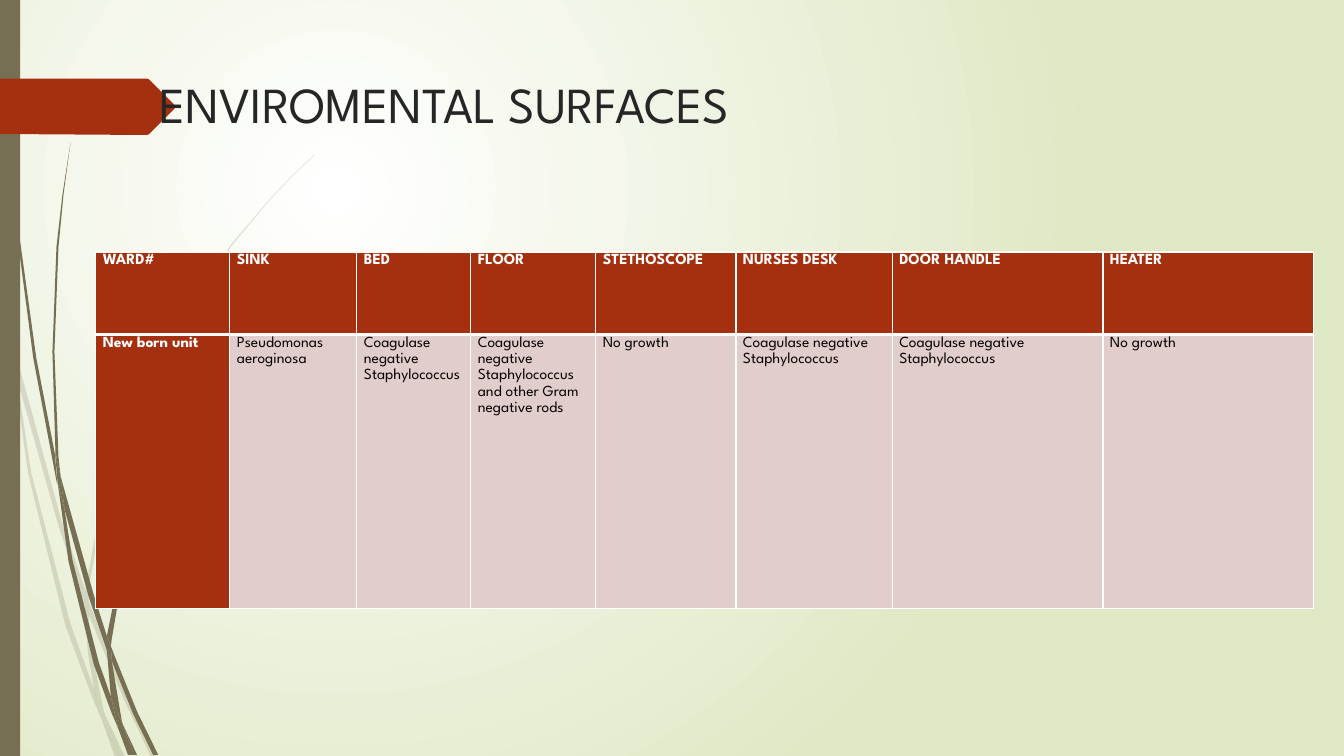
from lxml import etree
from pptx import Presentation
from pptx import util as u
from pptx.dml import color as col
from pptx.enum import shapes as sh, text as tx
from pptx.oxml import ns

HUES = {"bark": "766F54", "rust": "A53010", "rose": "E1CDCC", "ink": "262626",
        "black": "000000", "white": "FFFFFF", "lime": "DFE8C4"}
FACE = "League Spartan"

# Outlines of the grass leaves and the tag: corner points in inches
PALE = [
    [(.11, 3.5), (.09, 3.22), (0, 2.82), (0, 2.99), (.1, 3.44)],
    [(.58, 5.22), (.84, 5.99), (.85, 5.86), (.62, 5.2), (.14, 3.45),
     (.17, 3.76)],
    [(.92, 6.07), (.88, 5.96), (.88, 6.1), (1.23, 6.94), (1.5, 7.51),
     (1.55, 7.51), (1.27, 6.92)],
    [(1.19, 7.51), (1.24, 7.51), (1.05, 7.11)],
    [(.93, 6.83), (.7, 6.19), (.31, 4.69), (.17, 3.76), (.11, 3.5),
     (.28, 4.7), (.65, 6.21), (.92, 6.93), (1.01, 7.14), (.99, 7.07)],
    [(.84, 5.99), (.87, 6.46), (.93, 6.83), (.96, 6.92), (1.05, 7.11),
     (1.03, 7.06), (.91, 6.46), (.88, 6.1), (.88, 6.08)],
    [(.88, 5.84), (1.1, 4.62), (1.6, 3.49), (2.29, 2.45), (2.68, 1.98),
     (2.9, 1.75), (3.12, 1.54), (3.12, 1.53), (2.89, 1.75), (2.68, 1.97),
     (2.28, 2.44), (1.58, 3.48), (1.07, 4.61), (.85, 5.84), (.85, 5.86),
     (.88, 5.96)],
    [(1.01, 7.14), (1.14, 7.51), (1.19, 7.51)],
    [(.88, 6.08), (.88, 6.1), (.88, 5.96), (.85, 5.86), (.84, 5.99)],
    [(.96, 6.92), (.93, 6.83), (.99, 7.07), (1.01, 7.14), (1.19, 7.51),
     (1.05, 7.11)],
]
DARK = [
    [(.07, 1.1), (.17, 2.33), (.33, 3.55), (.56, 4.77), (.57, 4.81),
     (.55, 4.57), (.55, 4.53), (.36, 3.55), (.19, 2.32), (.08, 1.09),
     (.05, .48), (.04, 0), (.03, 0), (.04, .48)],
    [(.88, 5.92), (1.06, 6.45), (1.06, 6.33), (1.06, 6.31), (.93, 5.9),
     (.6, 4.72), (.64, 5.05)],
    [(1.13, 6.49), (1.1, 6.41), (1.11, 6.56), (1.32, 7.08), (1.52, 7.49),
     (1.57, 7.49), (1.36, 7.06)],
    [(1.1, 6.91), (.98, 6.57), (.72, 5.56), (.64, 5.05), (.57, 4.77),
     (.68, 5.57), (.93, 6.59), (1.11, 7.08), (1.17, 7.22), (1.16, 7.17)],
    [(.6, 4.72), (.58, 4.53), (.54, 3.49), (.58, 2.45), (.63, 1.93),
     (.7, 1.41), (.62, 1.93), (.56, 2.45), (.52, 3.49), (.55, 4.49)],
    [(1.33, 7.49), (1.36, 7.49), (1.22, 7.19)],
    [(.57, 4.77), (.64, 5.05), (.6, 4.72), (.55, 4.49), (.55, 4.53)],
    [(1.11, 6.33), (1.25, 5.52), (1.58, 4.76), (2.05, 4.06), (2.31, 3.74),
     (2.45, 3.59), (2.61, 3.44), (2.6, 3.44), (2.45, 3.58), (2.31, 3.73),
     (2.04, 4.05), (1.56, 4.74), (1.22, 5.51), (1.06, 6.31), (1.1, 6.41)],
    [(1.17, 7.22), (1.27, 7.49), (1.31, 7.49)],
    [(1.06, 6.45), (1.1, 6.91), (1.16, 7.06), (1.22, 7.19), (1.21, 7.16),
     (1.11, 6.56), (1.09, 6.51)],
    [(1.06, 6.45), (1.09, 6.51), (1.11, 6.56), (1.1, 6.41), (1.06, 6.31),
     (1.06, 6.33)],
    [(1.16, 7.06), (1.1, 6.91), (1.16, 7.17), (1.17, 7.22), (1.3, 7.49),
     (1.33, 7.49), (1.22, 7.19)],
]
TAG = [(0, 0), (1.46, 0), (1.48, .01), (1.73, .26), (1.74, .28), (1.73, .3),
       (1.48, .55), (1.46, .56), (0, .55)]

COLS = [1.33, 1.26, 1.13, 1.24, 1.39, 1.55, 2.09, 2.09]
ROWS = [.82, 2.72]
COCCI = "Coagulase negative Staphylococcus"
CELLS = [
    ["WARD#", "SINK", "BED", "FLOOR", "STETHOSCOPE", "NURSES DESK",
     "DOOR HANDLE", "HEATER"],
    ["New born unit", "Pseudomonas aeroginosa", COCCI,
     COCCI + " and other Gram negative rods", "No growth", COCCI, COCCI,
     "No growth"],
]


def rgb(hue):
    return col.RGBColor.from_string(HUES[hue])


def apply(item, form):
    for name, value in form.items():
        setattr(item, name, value)


def write(frame, words, hue, **form):
    frame.text = words
    font = frame.paragraphs[0].runs[0].font
    apply(font, {"name": FACE, **form})
    font.color.rgb = rgb(hue)


def paint(shape, hue, alpha=None):
    shape.shadow.inherit = False
    shape.line.fill.background()
    shape.fill.solid()
    shape.fill.fore_color.rgb = rgb(hue)
    if alpha:
        tone = shape._element.spPr.find(".//" + ns.qn("a:srgbClr"))
        etree.SubElement(tone, ns.qn("a:alpha"), val=str(alpha * 1000))


def trace(parts, left, top, knots, hue, alpha=None):
    dots = [(u.Inches(left + x), u.Inches(top + y)) for x, y in knots]
    pen = parts.build_freeform(*dots[0])
    pen.add_line_segments(dots[1:], close=True)
    paint(pen.convert_to_shape(), hue, alpha)


def backdrop(slide):
    fill = slide.background.fill
    fill.gradient()
    for stop, hue, place in zip(fill.gradient_stops, ("white", "lime"), (0, 1)):
        stop.color.rgb = rgb(hue)
        stop.position = place
    # Radial gradient centred in the upper left quarter
    lin = slide._element.find(".//" + ns.qn("a:lin"))
    ring = etree.Element(ns.qn("a:path"), path="circle")
    etree.SubElement(ring, ns.qn("a:fillToRect"), l="50000", t="50000",
                     r="100000", b="100000")
    lin.getparent().replace(lin, ring)


def grass(slide, left, top):
    for leaves, alpha in ((PALE, 20), (DARK, None)):
        tuft = slide.shapes.add_group_shape()
        for knots in leaves:
            trace(tuft.shapes, left, top, knots, "bark", alpha)


def side(slide, left, top, height):
    bar = slide.shapes.add_shape(sh.MSO_SHAPE.RECTANGLE, *map(
        u.Inches, (left, top, .2, height)))
    paint(bar, "bark")
    trace(slide.shapes, left, top + .78, TAG, "rust")


def heading(slide, left, top, width, height):
    title = slide.shapes.title
    apply(title, {"left": u.Inches(left), "top": u.Inches(top),
                  "width": u.Inches(width), "height": u.Inches(height)})
    frame = title.text_frame
    write(frame, "ENVIROMENTAL SURFACES", "ink", size=u.Pt(36))
    apply(frame, {"word_wrap": True, "vertical_anchor": tx.MSO_ANCHOR.TOP})
    frame.paragraphs[0].alignment = tx.PP_ALIGN.LEFT
    # Bring the title in front of the red tag
    slide.shapes._spTree.append(title._element)


def border(cell, base):
    props = cell._tc.get_or_add_tcPr()
    for edge, points in zip("LRTB", (1, 1, 1, base)):
        line = etree.SubElement(props, ns.qn("a:ln" + edge),
                                w=str(u.Pt(points)))
        solid = etree.SubElement(line, ns.qn("a:solidFill"))
        etree.SubElement(solid, ns.qn("a:srgbClr"), val=HUES["white"])


def results(slide, left, top):
    size = map(u.Inches, (left, top, sum(COLS), sum(ROWS)))
    table = slide.shapes.add_table(len(ROWS), len(COLS), *size).table
    apply(table, {"first_row": True, "first_col": True, "horz_banding": False})
    for track, width in zip(table.columns, COLS):
        track.width = u.Inches(width)
    for r, (line, height) in enumerate(zip(CELLS, ROWS)):
        table.rows[r].height = u.Inches(height)
        for c, words in enumerate(line):
            cell, head = table.cell(r, c), r == 0 or c == 0
            apply(cell, {"margin_left": u.Inches(.07), "margin_top": 0,
                         "margin_right": u.Inches(.07), "margin_bottom": 0})
            border(cell, 3 if r == 0 else 1)
            cell.fill.solid()
            cell.fill.fore_color.rgb = rgb("rust" if head else "rose")
            write(cell.text_frame, words, "white" if head else "black",
                  size=u.Pt(11), bold=head)
            cell.text_frame.paragraphs[0].line_spacing = 1.15


def main():
    deck = Presentation()
    apply(deck, {"slide_width": u.Inches(13.33), "slide_height": u.Inches(7.5)})
    slide = deck.slides.add_slide(deck.slide_layouts[5])
    backdrop(slide)
    grass(slide, 0, 0)
    side(slide, 0, 0, 7.5)
    heading(slide, 1.48, .68, 11.1, 1.4)
    results(slide, .95, 2.5)
    deck.save("out.pptx")


if __name__ == "__main__":
    main()
